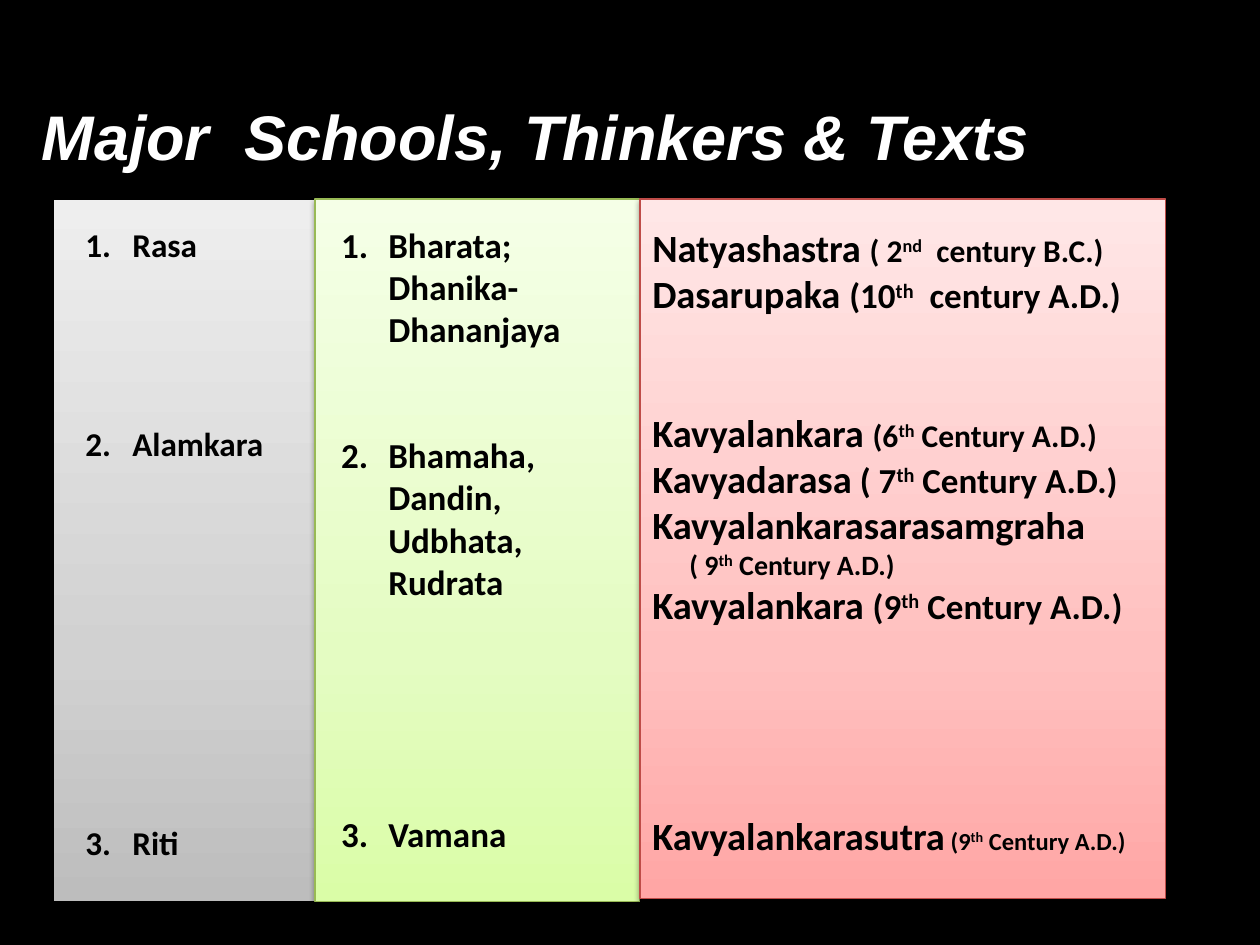
from lxml.etree import SubElement
from pptx import Presentation
from pptx.dml.color import RGBColor
from pptx.enum.shapes import MSO_SHAPE
from pptx.enum.text import MSO_ANCHOR, PP_ALIGN
from pptx.oxml.ns import qn
from pptx.util import Cm, Pt

COLORS = {"black": "000000", "white": "FFFFFF", "green": "98B955", "red": "BF4C48"}
GRADES = {
    "black": ("BDBDBD", "D1D1D1", "EEEEEE"),
    "green": ("DAFDA7", "E4FCC2", "F5FFE7"),
    "red": ("FFA6A5", "FFC0BF", "FFE7E7"),
}
STOPS = (0, 35, 100)
LINE = 1.2  # line height as a share of the font size
TOP, TEXT_TOP, TEXT_H = 4.01, 4.39, 14.1

# left, width, height, colour
PANELS = [
    (1.07, 5.28, 14.17, "black"),
    (6.35, 6.55, 14.17, "green"),
    (12.9, 10.59, 14.1, "red"),
]
# left, width, font size, items as (lines of gap above, text)
LISTS = [
    (1.47, 4.24, 19, [(0, "Rasa"), (4, "Alamkara"), (9, "Riti")]),
    (6.63, 5.72, 20, [(0, "Bharata; Dhanika- Dhananjaya"),
                      (2, "Bhamaha, Dandin, Udbhata, Rudrata"),
                      (5, "Vamana")]),
]
# lines of gap above, title, date size, date before, raised and after
WORKS = [
    (0, "Natyashastra ", 18, "( 2", "nd", "  century B.C.)"),
    (0, "Dasarupaka ", 20, "(10", "th", "  century A.D.)"),
    (2, "Kavyalankara ", 18, "(6", "th", " Century A.D.)"),
    (0, "Kavyadarasa", 20, " ( 7", "th", " Century A.D.)"),
    (0, "Kavyalankarasarasamgraha", 16, "", "", ""),
    (0, "", 16, "( 9", "th", " Century A.D.)"),
    (0, "Kavyalankara ", 20, "(9", "th", " Century A.D.)"),
    (4, "Kavyalankarasutra", 14, " (9", "th", " Century A.D.)"),
]


class Deck:
    def __init__(self):
        self.prs = Presentation()
        self.prs.slide_width, self.prs.slide_height = Cm(25.4), Cm(19.05)
        self.slide = self.prs.slides.add_slide(self.prs.slide_layouts[5])
        fill = self.slide.background.fill
        fill.solid()
        fill.fore_color.rgb = self.color("black")

    def color(self, name):
        return RGBColor.from_string(COLORS[name])

    def run(self, para, text, size, font="Calibri", color="black", raised=False):
        run = para.add_run()
        run.text = text
        run.font.size, run.font.name, run.font.bold = Pt(size), font, True
        run.font.color.rgb = self.color(color)
        if raised:
            run.font._element.set("baseline", "30000")
        return run

    def title(self, text):
        shape = self.slide.shapes.title
        shape.left, shape.top = Cm(0.84), Cm(1.96)
        shape.width, shape.height = Cm(22.66), Cm(1.55)
        frame = shape.text_frame
        frame.margin_left = frame.margin_right = 0
        frame.margin_top = frame.margin_bottom = 0
        frame.vertical_anchor = MSO_ANCHOR.TOP
        para = frame.paragraphs[0]
        para.alignment = PP_ALIGN.LEFT
        self.run(para, text, 36, "Arial", "white").font.italic = True

    def panel(self, left, width, height, color):
        """Add a column background with a vertical gradient and a soft shadow."""
        shape = self.slide.shapes.add_shape(
            MSO_SHAPE.RECTANGLE, Cm(left), Cm(TOP), Cm(width), Cm(height))
        shape.fill.gradient()
        shape.fill.gradient_angle = 90
        stops = shape._element.spPr.find(".//" + qn("a:gsLst"))
        for old in list(stops):
            stops.remove(old)
        for pos, tint in zip(STOPS, GRADES[color]):
            stop = SubElement(stops, qn("a:gs"), pos=str(pos * 1000))
            SubElement(stop, qn("a:srgbClr"), val=tint)
        shape.line.color.rgb = self.color(color)
        shape.line.width = Pt(0.75)
        shape.shadow.inherit = False
        effects = shape._element.spPr.find(qn("a:effectLst"))
        shade = SubElement(effects, qn("a:outerShdw"), blurRad=str(Pt(3.1)),
                           dist=str(Pt(1.6)), dir="5400000", rotWithShape="0")
        tone = SubElement(shade, qn("a:srgbClr"), val=COLORS["black"])
        SubElement(tone, qn("a:alpha"), val="38000")

    def box(self, left, width):
        shape = self.slide.shapes.add_textbox(
            Cm(left), Cm(TEXT_TOP), Cm(width), Cm(TEXT_H))
        shape.text_frame.word_wrap = True
        return shape.text_frame

    def para(self, frame, index, gap, size):
        """Return the paragraph at index, set below a gap counted in lines."""
        para = frame.add_paragraph() if index else frame.paragraphs[0]
        if gap:
            para.space_before = Pt(round(gap * size * LINE, 1))
        return para

    def numbers(self, left, width, size, items):
        frame = self.box(left, width)
        for index, (gap, text) in enumerate(items):
            para = self.para(frame, index, gap, size)
            props = para._p.get_or_add_pPr()
            props.set("marL", str(Cm(0.95)))
            props.set("indent", str(-Cm(0.95)))
            SubElement(props, qn("a:buFont"), typeface="+mj-lt")
            SubElement(props, qn("a:buAutoNum"), type="arabicPeriod")
            self.run(para, text, size)

    def works(self, left, width, items):
        frame = self.box(left, width)
        for index, (gap, name, size, start, mark, end) in enumerate(items):
            para = self.para(frame, index, gap, 22)
            if name:
                self.run(para, name, 22)
            else:
                para._p.get_or_add_pPr().set("marL", str(Cm(0.75)))
            if start:
                self.run(para, start, size)
                self.run(para, mark, size, raised=True)
                self.run(para, end, size)


def main():
    deck = Deck()
    deck.title("Major  Schools, Thinkers & Texts")
    for panel in PANELS:
        deck.panel(*panel)
    for column in LISTS:
        deck.numbers(*column)
    deck.works(12.9, 10.16, WORKS)
    deck.prs.save("out.pptx")


if __name__ == "__main__":
    main()
